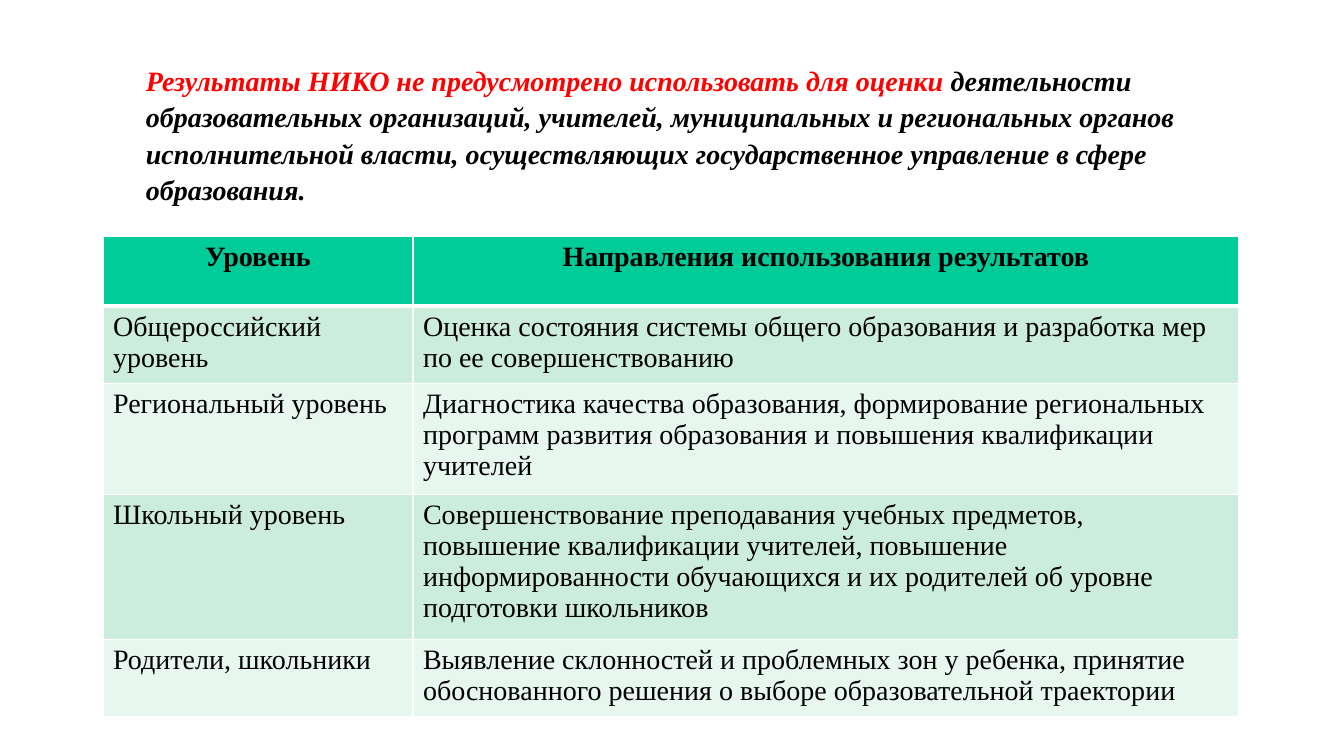
from lxml import etree
from pptx import Presentation
from pptx.dml.color import RGBColor
from pptx.enum.text import PP_ALIGN
from pptx.oxml.ns import qn
from pptx.util import Emu, Pt

CENTER, LEFT = PP_ALIGN.CENTER, PP_ALIGN.LEFT
COLORS = {
    "text": "000000",
    "accent": "FF0000",
    "header": "00CC99",
    "band_dark": "CCECDE",
    "band_light": "E7F6EF",
    "border": "FFFFFF",
}
INTRO = [
    ("Результаты НИКО не предусмотрено использовать для оценки", "accent"),
    (" деятельности образовательных организаций, учителей, муниципальных и региональных "
     "органов исполнительной власти, осуществляющих государственное управление в сфере "
     "образования.", "text"),
]
LEVELS = [
    ("Уровень", "Направления использования результатов"),
    ("Общероссийский уровень",
     "Оценка состояния системы общего образования и разработка мер по ее совершенствованию"),
    ("Региональный уровень",
     "Диагностика качества образования, формирование региональных программ развития "
     "образования и повышения квалификации учителей"),
    ("Школьный уровень",
     "Совершенствование преподавания учебных предметов, повышение квалификации учителей, "
     "повышение информированности обучающихся и их родителей об уровне подготовки школьников"),
    ("Родители, школьники",
     "Выявление склонностей и проблемных зон у ребенка, принятие обоснованного решения "
     "о выборе образовательной траектории"),
]


def px(n):
    return Emu(round(n * 914400 / 100.8))


class SlideBuilder:
    font = "Times New Roman"
    size = 20

    def __init__(self, slide):
        self.slide = slide

    def style(self, r, color="text", bold=False, italic=False):
        r.font.name = self.font
        r.font.size = Pt(self.size)
        r.font.bold = bold
        r.font.italic = italic
        r.font.color.rgb = RGBColor.from_string(COLORS[color])

    def text(self, x, y, w, h, parts, spacing):
        tf = self.slide.shapes.add_textbox(px(x), px(y), px(w), px(h)).text_frame
        tf.word_wrap = True
        p = tf.paragraphs[0]
        p.line_spacing = spacing
        for words, color in parts:
            r = p.add_run()
            r.text = words
            self.style(r, color, bold=True, italic=True)

    def borders(self, cell, header):
        tc_pr = cell._tc.get_or_add_tcPr()
        for i, side in enumerate(("lnL", "lnR", "lnT", "lnB")):
            width = Pt(3 if header and side == "lnB" else 1)
            ln = etree.Element(qn(f"a:{side}"), w=str(width))
            fill = etree.SubElement(ln, qn("a:solidFill"))
            etree.SubElement(fill, qn("a:srgbClr"), val=COLORS["border"])
            tc_pr.insert(i, ln)

    def table(self, x, y, widths, heights, rows):
        table = self.slide.shapes.add_table(
            len(rows), len(widths), px(x), px(y), px(sum(widths)), px(sum(heights))).table
        for column, w in zip(table.columns, widths):
            column.width = px(w)
        for i, (row, h, texts) in enumerate(zip(table.rows, heights, rows)):
            row.height = px(h)
            header = i == 0
            fill = "header" if header else "band_dark" if i % 2 else "band_light"
            for cell, words in zip(row.cells, texts):
                cell.fill.solid()
                cell.fill.fore_color.rgb = RGBColor.from_string(COLORS[fill])
                self.borders(cell, header)
                p = cell.text_frame.paragraphs[0]
                p.text = words
                p.alignment = CENTER if header else LEFT
                self.style(p.runs[0], bold=header)


def main():
    prs = Presentation()
    prs.slide_width, prs.slide_height = px(1344), px(756)
    s = SlideBuilder(prs.slides.add_slide(prs.slide_layouts[6]))
    s.text(136, 56, 1181, 146, INTRO, 1.08)
    s.table(103, 236, [310, 826], [70, 77, 111, 145, 77], LEVELS)
    prs.save("out.pptx")


if __name__ == "__main__":
    main()
